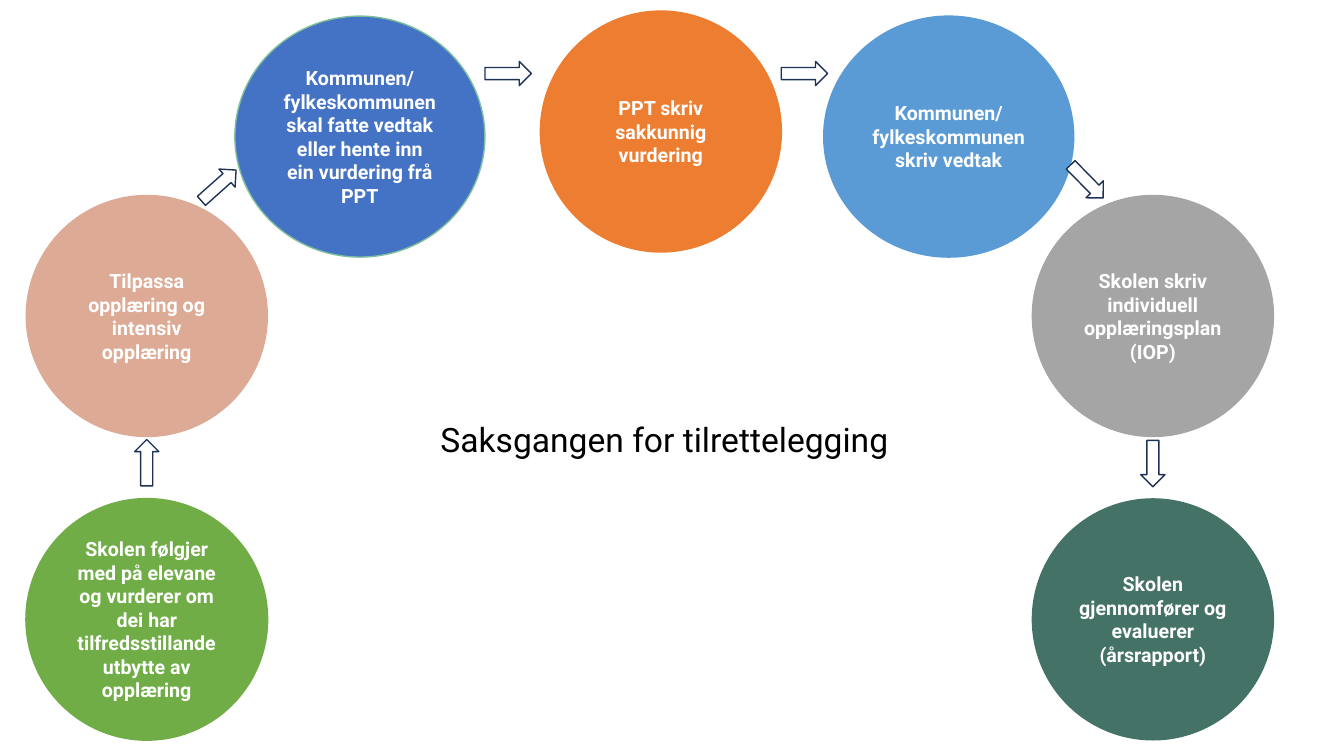
import dataclasses

import pptx
import pptx.dml.color
import pptx.enum.shapes
import pptx.enum.text
import pptx.util

SLIDE_WIDTH = pptx.util.Inches(13.33)
SLIDE_HEIGHT = pptx.util.Inches(7.5)
SHAPES = pptx.enum.shapes.MSO_SHAPE


@dataclasses.dataclass(frozen=True)
class Theme:
    font: str = "Roboto"
    title_size: float = 24
    step_size: float = 14
    outline: float = 1
    first_outline: float = 1.5
    black: str = "000000"
    white: str = "FFFFFF"
    navy: str = "1E3256"
    green: str = "70AD47"
    rose: str = "DDAA95"
    blue: str = "4472C4"
    mint: str = "7DBF9D"
    orange: str = "ED7D31"
    sky: str = "5B9BD5"
    grey: str = "A5A5A5"
    pine: str = "447266"


THEME = Theme()


@dataclasses.dataclass(frozen=True)
class Area:
    """Centre and size in percent of the slide."""

    center_x: float
    center_y: float
    width: float
    height: float

    def box(self) -> tuple[int, int, int, int]:
        width = round(SLIDE_WIDTH * self.width / 100)
        height = round(SLIDE_HEIGHT * self.height / 100)
        left = round(SLIDE_WIDTH * self.center_x / 100 - width / 2)
        top = round(SLIDE_HEIGHT * self.center_y / 100 - height / 2)
        return left, top, width, height


@dataclasses.dataclass(frozen=True)
class Step:
    text: str
    center_x: float
    center_y: float
    fill: str
    line: str
    width: float = 17.93
    outline: float = THEME.outline


@dataclasses.dataclass(frozen=True)
class Arrow:
    center_x: float
    center_y: float
    rotation: float = 0


LEFT, RIGHT = 10.92, 85.78
TOP, MIDDLE, BOTTOM = 18.07, 41.8, 81.93
STEP_HEIGHT = 31.87
WIDE_STEP = 18.6
ARROW_WIDTH, ARROW_HEIGHT = 3.45, 3.2
TITLE = "Saksgangen for tilrettelegging"
TITLE_AREA = Area(50, 58.13, 35.93, 6.67)

STEPS = (
    Step("Skolen følgjer med på elevane og vurderer om dei har tilfredsstillande utbytte av opplæring",
         LEFT, BOTTOM, THEME.green, THEME.green, outline=THEME.first_outline),
    Step("Tilpassa opplæring og intensiv opplæring", LEFT, MIDDLE, THEME.rose, THEME.rose),
    Step("Kommunen/ fylkeskommunen skal fatte vedtak eller hente inn ein vurdering frå PPT",
         26.78, TOP, THEME.blue, THEME.mint, WIDE_STEP),
    Step("PPT skriv sakkunnig vurdering", 49.17, 17.4, THEME.orange, THEME.orange),
    Step("Kommunen/ fylkeskommunen skriv vedtak", 70.59, TOP, THEME.sky, THEME.sky, WIDE_STEP),
    Step("Skolen skriv individuell opplæringsplan (IOP)", RIGHT, MIDDLE, THEME.grey, THEME.grey),
    Step("Skolen gjennomfører og evaluerer (årsrapport)", RIGHT, BOTTOM, THEME.pine, THEME.pine),
)

ARROWS = (
    Arrow(LEFT, 61.2, 270),
    Arrow(16.28, 24.53, 318.3),
    Arrow(37.81, 9.73),
    Arrow(59.86, 9.73),
    Arrow(80.87, 24, 45.5),
    Arrow(RIGHT, 61.33, 90),
)


def color(value: str) -> pptx.dml.color.RGBColor:
    return pptx.dml.color.RGBColor.from_string(value)


def add_outlined(page, kind, area: Area, fill: str, line: str, outline: float):
    shape = page.shapes.add_shape(kind, *area.box())
    shape.shadow.inherit = False
    shape.fill.solid()
    shape.fill.fore_color.rgb = color(fill)
    shape.line.color.rgb = color(line)
    shape.line.width = pptx.util.Pt(outline)
    return shape


def write(box, text: str, size: float, ink: str, bold: bool, align) -> None:
    frame = box.text_frame
    frame.text = text
    frame.word_wrap = True
    para = frame.paragraphs[0]
    para.alignment = align
    for span in para.runs:
        span.font.name = THEME.font
        span.font.size = pptx.util.Pt(size)
        span.font.bold = bold
        span.font.color.rgb = color(ink)


def add_step(page, step: Step) -> None:
    area = Area(step.center_x, step.center_y, step.width, STEP_HEIGHT)
    circle = add_outlined(page, SHAPES.FLOWCHART_CONNECTOR, area, step.fill, step.line, step.outline)
    circle.text_frame.vertical_anchor = pptx.enum.text.MSO_ANCHOR.MIDDLE
    write(circle, step.text, THEME.step_size, THEME.white, True, pptx.enum.text.PP_ALIGN.CENTER)


def add_arrow(page, arrow: Arrow) -> None:
    area = Area(arrow.center_x, arrow.center_y, ARROW_WIDTH, ARROW_HEIGHT)
    shape = add_outlined(page, SHAPES.RIGHT_ARROW, area, THEME.white, THEME.navy, THEME.outline)
    shape.rotation = arrow.rotation


def add_title(page) -> None:
    box = page.shapes.add_textbox(*TITLE_AREA.box())
    write(box, TITLE, THEME.title_size, THEME.black, False, pptx.enum.text.PP_ALIGN.LEFT)
    box.text_frame.auto_size = pptx.enum.text.MSO_AUTO_SIZE.SHAPE_TO_FIT_TEXT


def main() -> None:
    deck = pptx.Presentation()
    deck.slide_width = SLIDE_WIDTH
    deck.slide_height = SLIDE_HEIGHT
    page = deck.slides.add_slide(deck.slide_layouts[6])
    for step in STEPS:
        add_step(page, step)
    for arrow in ARROWS:
        add_arrow(page, arrow)
    add_title(page)
    deck.save("out.pptx")


if __name__ == "__main__":
    main()
